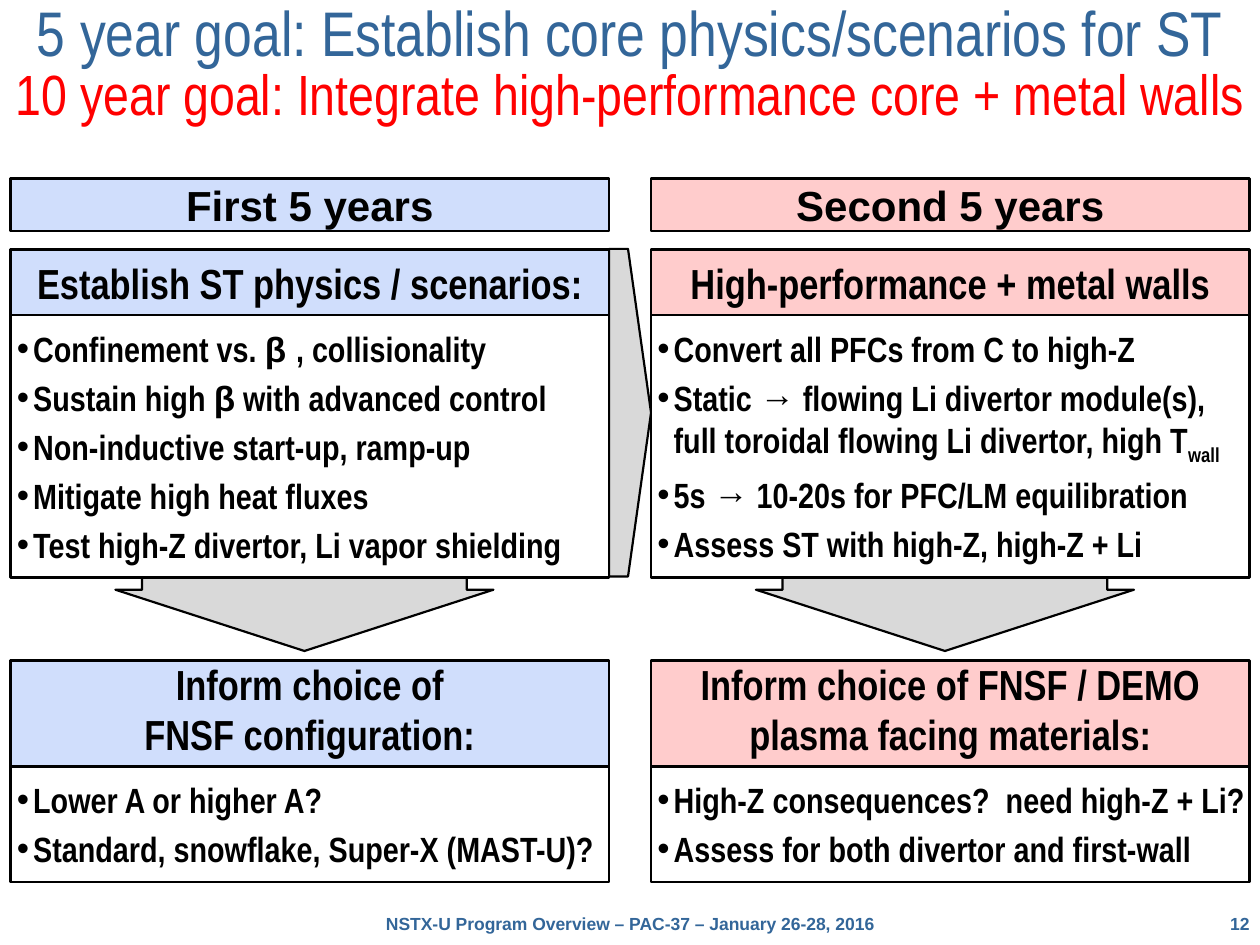
from dataclasses import dataclass
from typing import NamedTuple

from lxml import etree
from pptx import Presentation
from pptx.dml.color import RGBColor
from pptx.enum.shapes import MSO_SHAPE
from pptx.enum.text import MSO_ANCHOR, PP_ALIGN
from pptx.oxml.ns import qn
from pptx.util import Inches, Pt

RECT, DOWN = MSO_SHAPE.RECTANGLE, MSO_SHAPE.DOWN_ARROW
MIDDLE, TOP = MSO_ANCHOR.MIDDLE, MSO_ANCHOR.TOP
LEFT, CENTER, RIGHT = PP_ALIGN.LEFT, PP_ALIGN.CENTER, PP_ALIGN.RIGHT

WIDE, NARROW = "Arial", "Arial Narrow"
COLORS = {"black": "000000", "white": "FFFFFF", "gray": "D9D9D9", "steel": "336699",
          "red": "FF0000", "blue": "D0DEFC", "pink": "FFCCCC"}

# The slide is a grid of 120 columns by 90 rows
prs = Presentation()
prs.slide_width, prs.slide_height = Inches(10), Inches(7.5)
COL, ROW = prs.slide_width / 120, prs.slide_height / 90
SPAN = 57  # columns in one panel


class Box(NamedTuple):
    x: float
    y: float
    w: float
    h: float

    def emu(self) -> list[int]:
        return [round(n * unit) for n, unit in zip(self, (COL, ROW, COL, ROW))]


class Run(NamedTuple):
    text: str
    font: str = NARROW
    size: float = 20
    color: str = "black"
    bold: bool = True
    sub: bool = False


Para = list[Run]


@dataclass
class Panel:
    x: float
    tint: str
    era: str
    goal: str
    tasks: list[Para]
    choice: list[str]
    asks: list[Para]


def rgb(name: str) -> RGBColor:
    return RGBColor.from_string(COLORS[name])


def add_run(para, run: Run) -> None:
    part = para.add_run()
    part.text = run.text
    font = part.font
    font.name, font.size, font.bold = run.font, Pt(run.size), run.bold
    font.color.rgb = rgb(run.color)
    if run.sub:
        part._r.get_or_add_rPr().set("baseline", "-25000")


def write(shape, paras: list[Para], align, inset: float = 0, pad: float = 0,
          anchor=MIDDLE, gap: float = 4, lead: float = 1, dots: bool = False) -> None:
    frame = shape.text_frame
    frame.word_wrap, frame.vertical_anchor = True, anchor
    frame.margin_left, frame.margin_right = Inches(inset), 0
    frame.margin_top = frame.margin_bottom = Inches(pad)
    for i, runs in enumerate(paras):
        para = frame.add_paragraph() if i else frame.paragraphs[0]
        para.alignment, para.line_spacing = align, lead
        para.space_before = Pt(gap if i else 0)
        if dots:
            props = para._p.get_or_add_pPr()
            props.set("marL", str(Inches(0.13)))
            props.set("indent", str(-Inches(0.13)))
            etree.SubElement(props, qn("a:buFont")).set("typeface", WIDE)
            etree.SubElement(props, qn("a:buChar")).set("char", "•")
        for run in runs:
            add_run(para, run)


def draw(slide, kind, box: Box, fill: str, line: float = 1.5):
    shape = slide.shapes.add_shape(kind, *box.emu())
    shape.shadow.inherit = False
    shape.fill.solid()
    shape.fill.fore_color.rgb = rgb(fill)
    shape.line.color.rgb = rgb("black")
    shape.line.width = Pt(line)
    return shape


def arrow(slide, box: Box, shaft: float, head: float, turn: float = 0) -> None:
    shape = draw(slide, DOWN, box, "gray", 1.25)
    shape.adjustments[0], shape.adjustments[1] = shaft, head
    shape.rotation = turn


def label(slide, box: Box, paras: list[Para], align, **style) -> None:
    write(slide.shapes.add_textbox(*box.emu()), paras, align, **style)


def panel(slide, item: Panel) -> None:
    def bar(y: float, h: float, lines: list[str], font: str, lead: float = 1) -> None:
        shape = draw(slide, RECT, Box(item.x, y, SPAN, h), item.tint)
        write(shape, [[Run(text, font, 24)] for text in lines], CENTER, gap=5, lead=lead)

    def body(y: float, h: float, paras: list[Para]) -> None:
        shape = draw(slide, RECT, Box(item.x, y, SPAN, h), "white")
        write(shape, paras, LEFT, inset=0.05, dots=True)

    arrow(slide, Box(item.x + 10, 53, 36, 9), 0.859, 0.648)
    bar(17, 5, [item.era], WIDE)
    body(30, 25, item.tasks)
    bar(23.75, 6.25, [item.goal], NARROW)
    body(73, 11, item.asks)
    bar(62.9, 10.1, item.choice, NARROW, 0.8)


PANELS = [
    Panel(1, "blue", "First 5 years", "Establish ST physics / scenarios:",
          [[Run("Confinement vs. "), Run("β ", WIDE), Run(", collisionality")],
           [Run("Sustain high "), Run("β", WIDE), Run(" with advanced control")],
           [Run("Non-inductive start-up, ramp-up")],
           [Run("Mitigate high heat fluxes")],
           [Run("Test high-Z divertor, Li vapor shielding")]],
          ["Inform choice of", "FNSF configuration:"],
          [[Run("Lower A or higher A?")],
           [Run("Standard, snowflake, Super-X (MAST-U)?")]]),
    Panel(62, "pink", "Second 5 years", "High-performance + metal walls",
          [[Run("Convert all PFCs from C to high-Z")],
           [Run("Static → flowing Li divertor module(s), full toroidal flowing Li "
                "divertor, high T"), Run("wall", sub=True)],
           [Run("5s → 10-20s for PFC/LM equilibration")],
           [Run("Assess ST with high-Z, high-Z + Li")]],
          ["Inform choice of FNSF / DEMO", "plasma facing materials:"],
          [[Run("High-Z consequences?  need high-Z + Li?")],
           [Run("Assess for both divertor and first-wall")]]),
]


def main() -> None:
    slide = prs.slides.add_slide(prs.slide_layouts[6])

    # Title
    label(slide, Box(0, 0, 120, 12.6),
          [[Run("5 year goal: Establish core physics/scenarios for ST",
                size=36, color="steel", bold=False)],
           [Run("10 year goal: Integrate high-performance core + metal walls",
                size=32.4, color="red", bold=False)]],
          CENTER, pad=0.05, gap=0, lead=0.85)

    # Arrow between the panels, then the panels
    arrow(slide, Box(44.4, 37.3, 31.2, 4), 1, 0.547, 270)
    for item in PANELS:
        panel(slide, item)

    # Footer
    for box, text, align in (
            (Box(12, 86.4, 96, 3.2), "NSTX-U Program Overview – PAC-37 – January 26-28, 2016", CENTER),
            (Box(111, 86.4, 8, 3.2), "12", RIGHT)):
        label(slide, box, [[Run(text, WIDE, 10, "steel")]], align, pad=0.05, anchor=TOP)

    prs.save("out.pptx")


if __name__ == "__main__":
    main()
